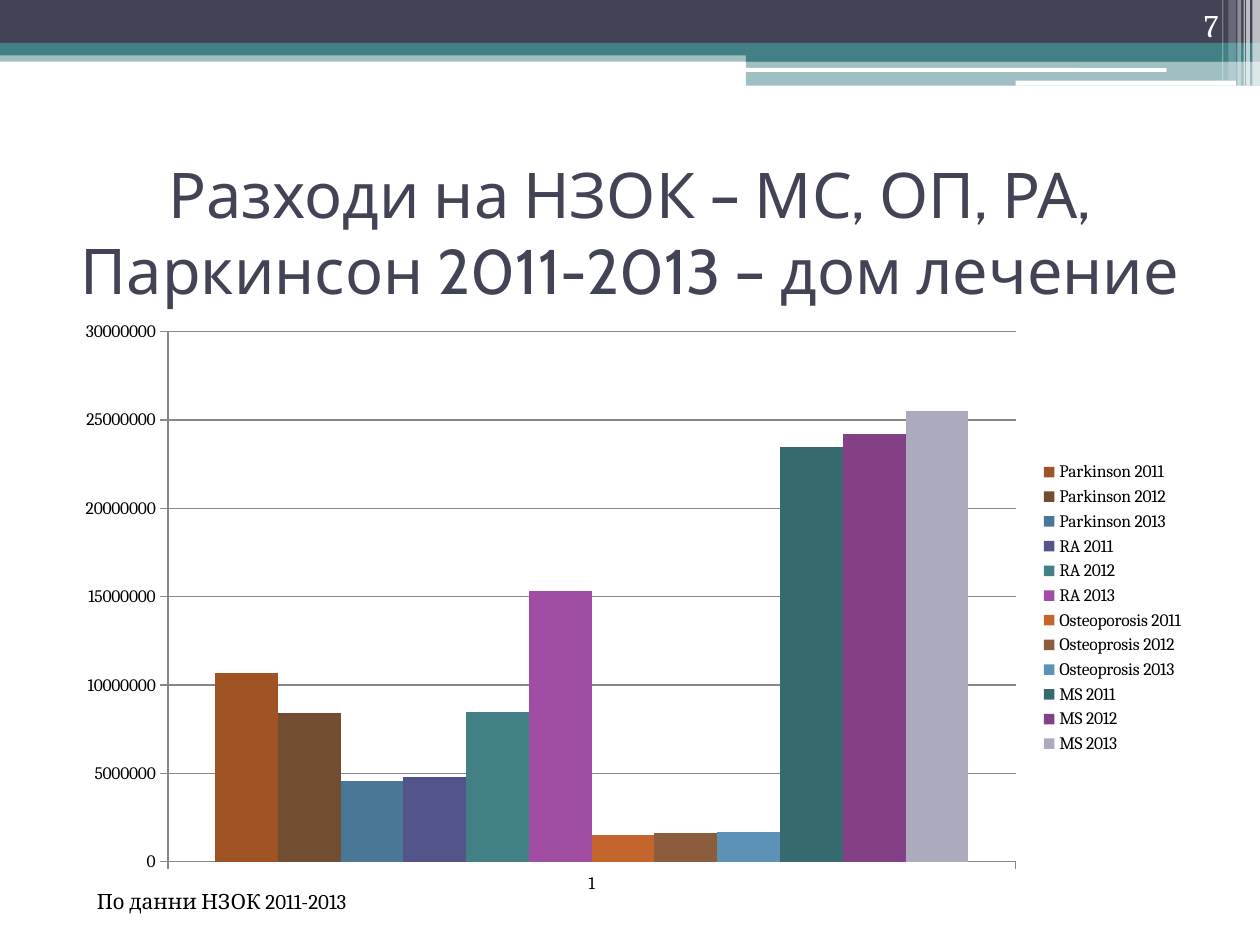
from dataclasses import dataclass

from lxml.etree import SubElement
from pptx import Presentation
from pptx.chart.data import CategoryChartData
from pptx.dml.color import RGBColor
from pptx.enum.chart import XL_CHART_TYPE, XL_LEGEND_POSITION, XL_TICK_MARK
from pptx.enum.shapes import MSO_SHAPE
from pptx.enum.text import MSO_ANCHOR, MSO_AUTO_SIZE, PP_ALIGN
from pptx.oxml.ns import qn
from pptx.util import Pt

PX = 9144  # 100 px to the inch


@dataclass(frozen=True)
class Theme:
    navy: str = "424456"
    teal: str = "438086"
    white: str = "FFFFFF"
    black: str = "000000"
    grid: str = "878787"
    heading_font: str = "Cabin"
    body_font: str = "Cambria"
    title_size: int = 36
    number_size: int = 18
    source_size: int = 12
    chart_size: int = 10


theme = Theme()


def add_band(box, color, opacity=100, kind=MSO_SHAPE.RECTANGLE):
    """Add a borderless bar; opacity is in percent."""
    band = slide.shapes.add_shape(kind, *(v * PX for v in box))
    band.shadow.inherit = False
    band.line.fill.background()
    band.fill.solid()
    band.fill.fore_color.rgb = RGBColor.from_string(color)
    if opacity < 100:
        srgb = band.fill._xPr.find(qn("a:solidFill")).find(qn("a:srgbClr"))
        SubElement(srgb, qn("a:alpha")).set("val", str(opacity * 1000))


def style_text(frame, text, font, size, color, align, anchor):
    frame.word_wrap = True
    frame.auto_size = MSO_AUTO_SIZE.NONE
    frame.vertical_anchor = anchor
    frame.text = text
    paragraph = frame.paragraphs[0]
    paragraph.alignment = align
    paragraph.font.name = font
    paragraph.font.size = Pt(size)
    paragraph.font.color.rgb = RGBColor.from_string(color)


prs = Presentation()
prs.slide_width, prs.slide_height = 1000 * PX, 750 * PX
slide = prs.slides.add_slide(prs.slide_layouts[5])

# Header bands
add_band((0, 40, 1000, 9), theme.teal, 50)
add_band((0, 0, 1000, 34), theme.navy)
add_band((0, 34, 1000, 10), theme.teal)
add_band((592, 39, 408, 10), theme.teal)
add_band((592, 48, 408, 20), theme.teal, 50)
for highlight in ((591, 54, 335, 3), (806, 64, 175, 4)):
    add_band(highlight, theme.white, kind=MSO_SHAPE.ROUNDED_RECTANGLE)

# Vertical stripes in the corner: left, width, height, opacity
for left, width, height, opacity in (
    (994, 6, 68, 65),
    (989, 3, 68, 65),
    (987, 1, 68, 60),
    (982, 3, 68, 40),
    (975, 6, 64, 20),
    (970, 1, 64, 30),
):
    add_band((left, 0, width, height), theme.white, opacity)

title = slide.shapes.title
title.left, title.top, title.width, title.height = (
    v * PX for v in (50, 125, 900, 117))
style_text(title.text_frame,
           "Разходи на НЗОК – МС, ОП, РА, Паркинсон 2011-2013 – дом лечение",
           theme.heading_font, theme.title_size, theme.navy,
           PP_ALIGN.CENTER, MSO_ANCHOR.MIDDLE)

page_number = slide.shapes.add_textbox(*(v * PX for v in (894, 0, 83, 40)))
style_text(page_number.text_frame, "7", theme.body_font, theme.number_size,
           theme.white, PP_ALIGN.RIGHT, MSO_ANCHOR.BOTTOM)

# Spending by disease and year
spending = (
    ("Parkinson 2011", 10700000, "A05324"),
    ("Parkinson 2012", 8400000, "724D32"),
    ("Parkinson 2013", 4600000, "4B7796"),
    ("RA 2011", 4800000, "53548A"),
    ("RA 2012", 8500000, "438086"),
    ("RA 2013", 15300000, "A04DA3"),
    ("Osteoporosis 2011", 1500000, "C4652D"),
    ("Osteoprosis 2012", 1600000, "8B5D3D"),
    ("Osteoprosis 2013", 1700000, "5C92B5"),
    ("MS 2011", 23500000, "366A6E"),
    ("MS 2012", 24200000, "853F87"),
    ("MS 2013", 25500000, "ABABBD"),
)
chart_data = CategoryChartData()
chart_data.categories = ["1"]
for name, amount, _ in spending:
    chart_data.add_series(name, [amount])

chart = slide.shapes.add_chart(
    XL_CHART_TYPE.COLUMN_CLUSTERED,
    *(v * PX for v in (50, 246, 900, 473)), chart_data).chart
chart.has_title = False
chart.font.name = theme.body_font
chart.font.size = Pt(theme.chart_size)
chart.font.color.rgb = RGBColor.from_string(theme.black)
chart.has_legend = True
chart.legend.position = XL_LEGEND_POSITION.RIGHT
chart.legend.include_in_layout = False

columns = chart.plots[0]
columns.gap_width = 150
columns.overlap = 0
columns.vary_by_categories = False
for series, (_, _, color) in zip(columns.series, spending):
    series.format.fill.solid()
    series.format.fill.fore_color.rgb = RGBColor.from_string(color)

amounts = chart.value_axis
amounts.minimum_scale, amounts.maximum_scale = 0, 30000000
amounts.major_unit = 5000000
amounts.has_major_gridlines = True
amounts.tick_labels.number_format = "General"
amounts.tick_labels.number_format_is_linked = False
for axis in (chart.category_axis, amounts):
    axis.major_tick_mark = XL_TICK_MARK.OUTSIDE
for line in (chart.category_axis.format.line, amounts.format.line,
             amounts.major_gridlines.format.line):
    line.color.rgb = RGBColor.from_string(theme.grid)
    line.width = Pt(0.75)

source_note = slide.shapes.add_textbox(*(v * PX for v in (67, 700, 370, 30)))
style_text(source_note.text_frame, "По данни НЗОК 2011-2013",
           theme.body_font, theme.source_size, theme.black,
           PP_ALIGN.LEFT, MSO_ANCHOR.TOP)

prs.save("out.pptx")
